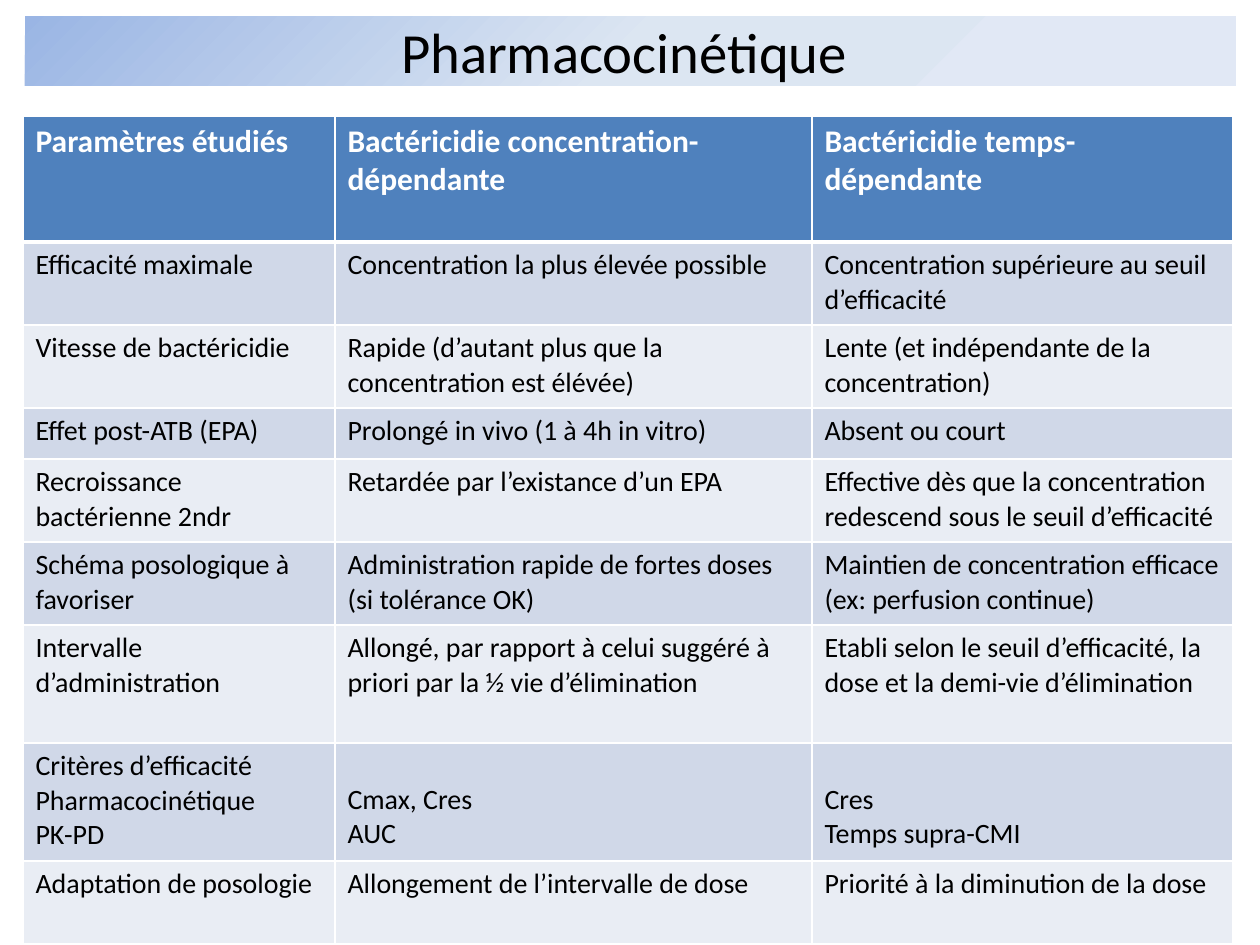
from dataclasses import dataclass

from lxml.etree import SubElement
from pptx import Presentation
from pptx.dml.color import RGBColor
from pptx.enum.shapes import MSO_SHAPE as Shape
from pptx.enum.text import MSO_ANCHOR as Anchor, PP_ALIGN as Align
from pptx.oxml import parse_xml
from pptx.oxml.ns import nsdecls, qn
from pptx.util import Emu, Pt

EMU_PER_PX = 914400 / 126


@dataclass(frozen=True)
class Theme:
    font: str = "Calibri"
    ink: str = "000000"
    white: str = "FFFFFF"
    header: str = "4F81BD"
    bands: tuple = ("D0D8E8", "E9EDF4")
    banner: tuple = ((0, "9AB5E4"), (50, "DCE6F2"), (100, "E1E8F5"))
    banner_angle: int = 45
    title_size: float = 32.4
    header_size: int = 18
    body_size: int = 16
    rule: int = 1
    header_rule: int = 3


THEME = Theme()

COLUMN_WIDTHS = (312, 477, 421)
ROW_HEIGHTS = (126, 83, 83, 51, 83, 83, 118, 118, 83)
CRITERIA_ROW = 7
CRITERIA_TOP = 40  # the values start one line below the row's label

ROWS = (
    ("Paramètres étudiés", "Bactéricidie concentration-dépendante",
     "Bactéricidie temps-dépendante"),
    ("Efficacité maximale", "Concentration la plus élevée possible",
     "Concentration supérieure au seuil d’efficacité"),
    ("Vitesse de bactéricidie",
     "Rapide (d’autant plus que la concentration est élévée)",
     "Lente (et indépendante de la concentration)"),
    ("Effet post-ATB (EPA)", "Prolongé in vivo (1 à 4h in vitro)",
     "Absent ou court"),
    ("Recroissance bactérienne 2ndr", "Retardée par l’existance d’un EPA",
     "Effective dès que la concentration redescend sous le seuil d’efficacité"),
    ("Schéma posologique à favoriser",
     "Administration rapide de fortes doses (si tolérance OK)",
     "Maintien de concentration efficace (ex: perfusion continue)"),
    ("Intervalle d’administration",
     "Allongé, par rapport à celui suggéré à priori par la ½ vie d’élimination",
     "Etabli selon le seuil d’efficacité, la dose et la demi-vie d’élimination"),
    ("Critères d’efficacité\nPharmacocinétique\nPK-PD", "Cmax, Cres\nAUC",
     "Cres\nTemps supra-CMI"),
    ("Adaptation de posologie", "Allongement de l’intervalle de dose",
     "Priorité à la diminution de la dose"),
)


def px(length):
    return Emu(round(length * EMU_PER_PX))


def write(frame, text, color, align=Align.LEFT, **font_format):
    """Fill a text frame, one paragraph per line of text."""
    frame.text = text
    for paragraph in frame.paragraphs:
        paragraph.alignment = align
        for run in paragraph.runs:
            run.font.color.rgb = RGBColor.from_string(color)
            for name, value in {"name": THEME.font, **font_format}.items():
                setattr(run.font, name, value)


def fill_gradient(shape, stops, angle):
    stop_xml = "".join(
        f'<a:gs pos="{position * 1000}"><a:srgbClr val="{color}"/></a:gs>'
        for position, color in stops)
    gradient = parse_xml(
        f'<a:gradFill {nsdecls("a")} rotWithShape="1"><a:gsLst>{stop_xml}</a:gsLst>'
        f'<a:lin ang="{angle * 60000}" scaled="0"/></a:gradFill>')
    shape.fill.background()
    properties = shape.fill._xPr
    properties.replace(properties.find(qn("a:noFill")), gradient)


def draw_borders(cell, **widths):
    """Rule the cell's sides; widths in points, keyed L, R, T, B in order."""
    properties = cell._tc.get_or_add_tcPr()
    for side, width in widths.items():
        line = SubElement(properties, qn(f"a:ln{side}"), w=str(Pt(width)))
        fill = SubElement(line, qn("a:solidFill"))
        SubElement(fill, qn("a:srgbClr"), val=THEME.white)


def add_banner(slide, text, left, top, width, height):
    banner = slide.shapes.add_shape(
        Shape.RECTANGLE, px(left), px(top), px(width), px(height))
    banner.shadow.inherit = False
    banner.line.fill.background()
    fill_gradient(banner, THEME.banner, THEME.banner_angle)
    banner.text_frame.vertical_anchor = Anchor.MIDDLE
    write(banner.text_frame, text, THEME.ink, Align.CENTER,
          size=Pt(THEME.title_size), bold=False)


def style_cell(cell, text, row):
    is_header = row == 0
    draw_borders(
        cell, L=THEME.rule, R=THEME.rule,
        T=THEME.header_rule if row == 1 else THEME.rule,
        B=THEME.header_rule if is_header else THEME.rule)
    cell.fill.solid()
    cell.fill.fore_color.rgb = RGBColor.from_string(
        THEME.header if is_header else THEME.bands[(row - 1) % 2])
    write(cell.text_frame, text, THEME.white if is_header else THEME.ink,
          size=Pt(THEME.header_size if is_header else THEME.body_size),
          bold=is_header)


def add_comparison(slide, left, top):
    table = slide.shapes.add_table(
        len(ROWS), len(COLUMN_WIDTHS), px(left), px(top),
        px(sum(COLUMN_WIDTHS)), px(sum(ROW_HEIGHTS))).table
    table.horz_banding = False
    for column, width in zip(table.columns, COLUMN_WIDTHS):
        column.width = px(width)
    for row, height in zip(table.rows, ROW_HEIGHTS):
        row.height = px(height)
    for r, texts in enumerate(ROWS):
        for c, text in enumerate(texts):
            style_cell(table.cell(r, c), text, r)
    for c in (1, 2):
        table.cell(CRITERIA_ROW, c).margin_top = px(CRITERIA_TOP)


def main():
    deck = Presentation()
    deck.slide_width, deck.slide_height = px(1260), px(945)
    slide = deck.slides.add_slide(deck.slide_layouts[6])

    # Title banner
    add_banner(slide, "Pharmacocinétique ", 25, 16, 1211, 70)

    # Comparison of the two kinds of bactericidal activity
    add_comparison(slide, 23, 116)

    deck.save("out.pptx")


if __name__ == "__main__":
    main()
